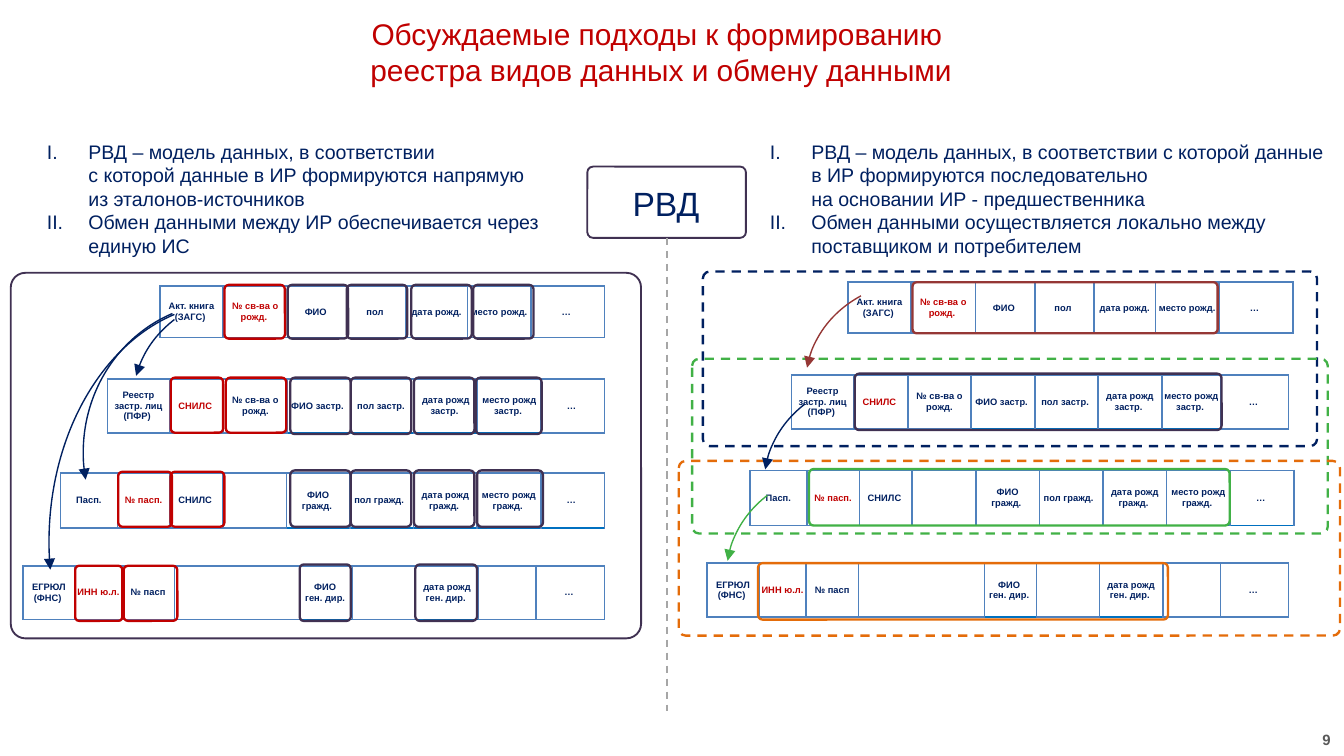
from lxml import etree
from pptx import Presentation
from pptx import util as u
from pptx.dml.color import RGBColor
from pptx.enum import dml, shapes, text
from pptx.oxml.ns import qn

NAVY = RGBColor(0x00, 0x20, 0x60)
RED = RGBColor(0xC0, 0x00, 0x00)
PURPLE = RGBColor(0x40, 0x31, 0x52)
MAROON = RGBColor(0x95, 0x37, 0x35)
GREEN = RGBColor(0x41, 0xB1, 0x46)
ORANGE = RGBColor(0xE4, 0x6C, 0x0A)
GREY = RGBColor(0xA6, 0xA6, 0xA6)
DARK_GREY = RGBColor(0x59, 0x59, 0x59)
GRID = RGBColor(0x4F, 0x81, 0xBD)
GRID_BOTTOM = RGBColor(0x00, 0x70, 0xC0)

# Records of each register: labels and the columns with a bright bottom edge
CIVIL = (["Акт. книга (ЗАГС) ", "№ св-ва о рожд. ", "ФИО ", "пол ", "дата рожд.",
          "место рожд.", "… "], set())
PENSION = (["Реестр застр. лиц (ПФР) ", "СНИЛС ", "№ св-ва о рожд.", "ФИО застр. ",
            "пол застр. ", "дата рожд\vзастр. ", "место рожд застр. ", "… "],
           {3, 4, 5, 6})
PASSPORT = (["Пасп.", "№ пасп.", "СНИЛС ", "", "ФИО\nгражд. ", "пол гражд.  ",
             "дата рожд гражд. ", "место рожд гражд. ", "… "], {4, 5, 6, 7, 8})
COMPANY = (["ЕГРЮЛ (ФНС) ", "ИНН ю.л.", "№ пасп", "", "ФИО \vген. дир. ", "",
            "дата рожд\vген. дир. ", "", "… "], {4, 6})

# Column proportions; each record is scaled to its full width
CIVIL_COLS = [0.47, 0.48, 0.44, 0.44, 0.46, 0.47, 0.55]
PENSION_COLS = [0.46, 0.4] + [0.47] * 6
PASSPORT_COLS = [0.42, 0.39, 0.39] + [0.47] * 6
COMPANY_COLS = [0.39, 0.35, 0.39, 0.94, 0.39, 0.47, 0.47, 0.43, 0.51]


class Painter:
    font = "Arial"

    def __init__(self, page):
        self.page = page

    def style(self, frame, size, color, align=None, bold=False):
        for para in frame.paragraphs:
            para.alignment = align
            for span in para.runs:
                span.font.name = self.font
                span.font.size = u.Pt(size)
                span.font.bold = bold
                span.font.color.rgb = color

    def label(self, place, words, size, color, align=None, bold=False,
              anchor=text.MSO_ANCHOR.TOP):
        box = self.page.shapes.add_textbox(*map(u.Inches, place))
        frame = box.text_frame
        frame.word_wrap = True
        frame.vertical_anchor = anchor
        frame.text = words
        self.style(frame, size, color, align, bold)
        return frame

    def numbered(self, place, words):
        frame = self.label(place, words, 10.5, NAVY)
        for para in frame.paragraphs:
            props = para._p.get_or_add_pPr()
            props.set("marL", str(u.Inches(0.31)))
            props.set("indent", str(-u.Inches(0.31)))
            etree.SubElement(props, qn("a:buFont"), typeface="+mj-lt")
            etree.SubElement(props, qn("a:buAutoNum"), type="romanUcPeriod")
            para.font.size = u.Pt(10.5)
            para.font.color.rgb = NAVY

    def outline(self, kind, place, color, width):
        shape = self.page.shapes.add_shape(kind, *map(u.Inches, place))
        shape.shadow.inherit = False
        shape.fill.background()
        shape.line.color.rgb = color
        shape.line.width = u.Pt(width)
        return shape

    def frame(self, place, color, width=1.25, corner=0.08, dashed=False):
        shape = self.outline(shapes.MSO_SHAPE.ROUNDED_RECTANGLE, place, color, width)
        shape.adjustments[0] = corner
        if dashed:
            shape.line.dash_style = dml.MSO_LINE.DASH

    def arc(self, place, turn, start, end, color):
        shape = self.outline(shapes.MSO_SHAPE.ARC, place, color, 0.75)
        shape.rotation = turn
        shape.adjustments[0] = start
        shape.adjustments[1] = end
        etree.SubElement(shape.line._get_or_add_ln(), qn("a:headEnd"), type="triangle")

    def divider(self, x, top, bottom):
        line = self.page.shapes.add_connector(
            shapes.MSO_CONNECTOR.STRAIGHT, *map(u.Inches, (x, top, x, bottom)))
        line.line.color.rgb = GREY
        line.line.width = u.Pt(1)
        line.line.dash_style = dml.MSO_LINE.DASH
        etree.SubElement(line._element.spPr, qn("a:effectLst"))

    def border(self, cell, bottom):
        props = cell._tc.get_or_add_tcPr()
        for side in ("lnL", "lnR", "lnT", "lnB"):
            edge = etree.SubElement(props, qn("a:" + side), w=str(u.Pt(1)))
            fill = etree.SubElement(edge, qn("a:solidFill"))
            color = bottom if side == "lnB" else GRID
            etree.SubElement(fill, qn("a:srgbClr"), val=str(color))

    def record(self, place, widths, content):
        labels, bright = content
        holder = self.page.shapes.add_table(1, len(labels), *map(u.Inches, place))
        table = holder.table
        table.first_row = table.horz_banding = False
        scale = place[2] / sum(widths)
        for i, (words, width) in enumerate(zip(labels, widths)):
            table.columns[i].width = u.Inches(width * scale)
            cell = table.cell(0, i)
            self.border(cell, GRID_BOTTOM if i in bright else GRID)
            cell.fill.background()
            cell.margin_left = cell.margin_right = 0
            cell.margin_top = cell.margin_bottom = 0
            cell.vertical_anchor = text.MSO_ANCHOR.MIDDLE
            cell.text_frame.text = words
            # The second column holds the key of each register
            self.style(cell.text_frame, 5, RED if i == 1 else NAVY,
                       text.PP_ALIGN.CENTER, bold=True)


def main():
    deck = Presentation()
    deck.slide_width = u.Inches(10)
    deck.slide_height = deck.slide_width * 9 // 16
    art = Painter(deck.slides.add_slide(deck.slide_layouts[6]))
    center, middle = text.PP_ALIGN.CENTER, text.MSO_ANCHOR.MIDDLE

    # Title, central model and divider
    art.label((-0.08, 0.18, 10, 0.41),
              "Обсуждаемые подходы к формированию \vреестра видов данных и обмену данными",
              16, RED, center, anchor=middle)
    art.label((4.48, 1.31, 0.95, 0.4), "РВД", 18, NAVY, center)
    art.frame((4.37, 1.24, 1.18, 0.53), PURPLE, 1)
    art.divider(4.96, 1.77, 5.29)
    art.label((7.67, 5.39, 2.33, 0.23), "9", 8, DARK_GREY, text.PP_ALIGN.RIGHT,
              True, middle)

    # Descriptions of the two approaches
    art.numbered((0.25, 0.99, 3.89, 0.98),
                 "РВД – модель данных, в соответствии \vс которой данные в ИР "
                 "формируются напрямую из эталонов-источников\n"
                 "Обмен данными между ИР обеспечивается через единую ИС")
    art.numbered((5.63, 0.99, 4.37, 0.98),
                 "РВД – модель данных, в соответствии с которой данные в ИР "
                 "формируются последовательно \vна основании ИР - предшественника\n"
                 "Обмен данными осуществляется локально между поставщиком и потребителем")

    # Left: one shared area, right: overlapping pairs of registers
    art.frame((0.08, 2.03, 4.69, 2.72), PURPLE, 1, 0.04)
    for place, color in (((5.23, 2.02, 4.57, 1.3), NAVY),
                         ((5.15, 2.67, 4.73, 1.3), GREEN),
                         ((5.05, 3.43, 4.92, 1.3), ORANGE)):
        art.frame(place, color, corner=0.04, dashed=True)

    # Register records
    for place, widths, content in (
            ((1.19, 2.13, 3.31, 0.38), CIVIL_COLS, CIVIL),
            ((0.8, 2.82, 3.7, 0.4), PENSION_COLS, PENSION),
            ((0.45, 3.52, 4.05, 0.41), PASSPORT_COLS, PASSPORT),
            ((0.17, 4.21, 4.33, 0.4), COMPANY_COLS, COMPANY),
            ((6.31, 2.1, 3.31, 0.38), CIVIL_COLS, CIVIL),
            ((5.89, 2.79, 3.7, 0.4), PENSION_COLS[:6] + [0.44, 0.5], PENSION),
            ((5.58, 3.5, 4.05, 0.41), PASSPORT_COLS, PASSPORT),
            ((5.26, 4.19, 4.33, 0.4), COMPANY_COLS, COMPANY)):
        art.record(place, widths, content)

    # Arrows between registers
    for place, turn, start, end, color in (
            ((1.07, 2.11, 1.48, 1.65), 256.4, 176.11, 198.62, NAVY),
            ((0.57, 2.3, 2.23, 2.13), 270, 155.38, 203.25, NAVY),
            ((-0.07, 2.69, 3.55, 2.68), 270, 156.65, 207.87, NAVY),
            ((6.08, 2.01, 1.48, 1.65), 265.4, 168.92, 198.85, MAROON),
            ((5.77, 2.74, 1.48, 1.65), 261.5, 170.16, 195.37, NAVY),
            ((5.49, 3.42, 1.48, 1.65), 261.5, 170.16, 195.37, GREEN)):
        art.arc(place, turn, start, end, color)

    # Left highlights: top, height, colour, then (left, width) of each frame
    for top, height, color, spans in (
            (2.12, 0.4, PURPLE, ((2.14, 0.45), (2.58, 0.45), (3.06, 0.45), (3.52, 0.45))),
            (2.81, 0.42, PURPLE, ((2.16, 0.45), (2.61, 0.45), (3.08, 0.45), (3.54, 0.49))),
            (3.5, 0.42, PURPLE, ((2.16, 0.45), (2.61, 0.45), (3.08, 0.45), (3.55, 0.49))),
            (4.2, 0.42, PURPLE, ((2.23, 0.38), (3.09, 0.46))),
            (2.12, 0.4, RED, ((1.67, 0.45),)),
            (2.81, 0.41, RED, ((1.68, 0.45), (1.27, 0.39))),
            (3.51, 0.41, RED, ((1.27, 0.4), (0.88, 0.4))),
            (4.21, 0.41, RED, ((0.92, 0.4), (0.56, 0.35)))):
        for left, width in spans:
            art.frame((left, top, width, height), color)

    # Right highlights
    for place, color in (((6.79, 2.1, 2.27, 0.38), MAROON),
                         ((6.02, 3.49, 3.13, 0.42), GREEN),
                         ((6.36, 2.78, 2.73, 0.42), PURPLE),
                         ((5.64, 4.19, 3.05, 0.42), ORANGE)):
        art.frame(place, color)

    deck.save("out.pptx")


if __name__ == "__main__":
    main()
